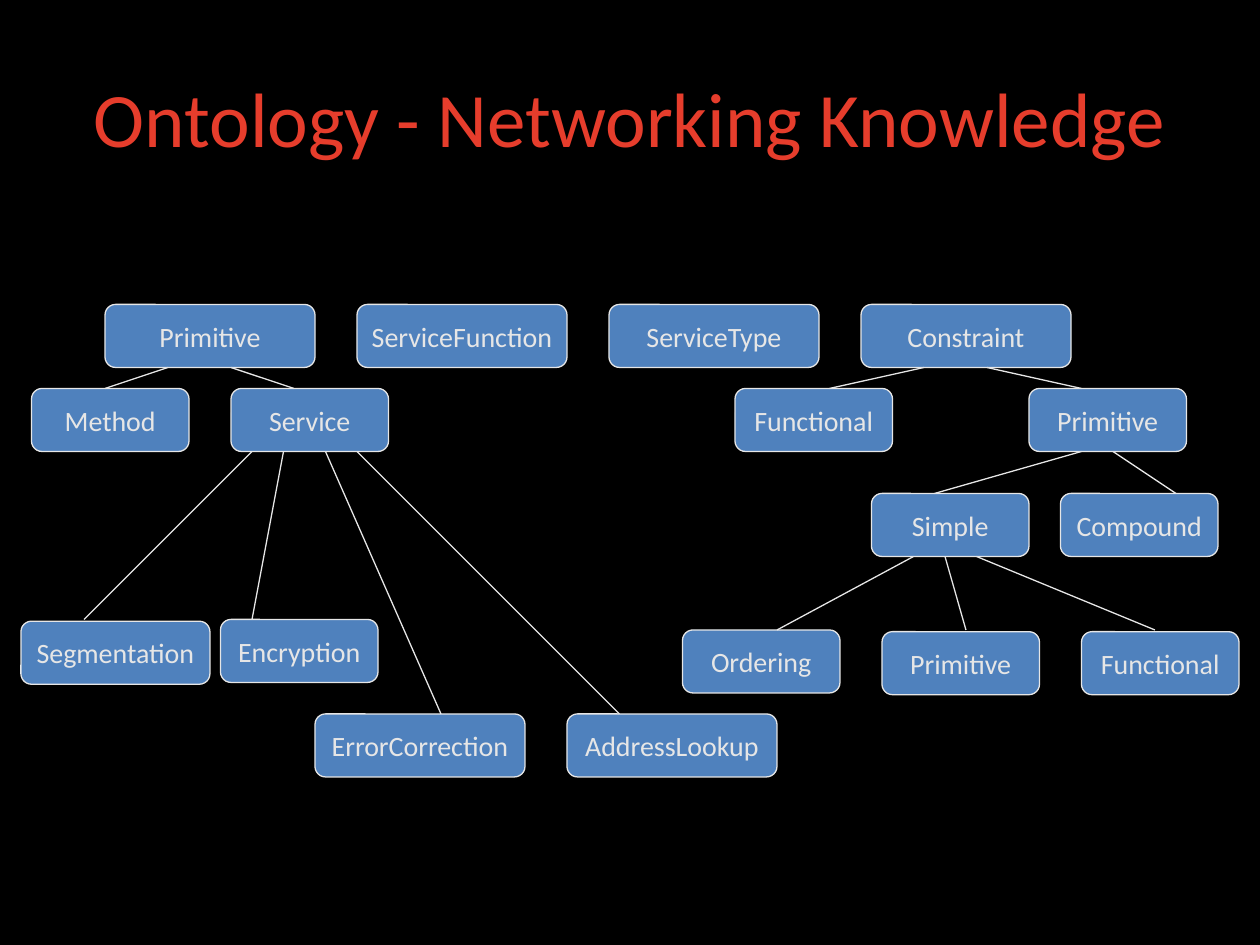
from pptx import Presentation
from pptx.dml.color import RGBColor
from pptx.enum.shapes import MSO_CONNECTOR, MSO_SHAPE
from pptx.enum.text import MSO_ANCHOR, PP_ALIGN
from pptx.oxml.ns import qn
from pptx.util import Pt
from lxml.etree import SubElement

BLACK = RGBColor(0x00, 0x00, 0x00)
RED = RGBColor(0xE6, 0x3D, 0x2C)
BLUE = RGBColor(0x4F, 0x81, 0xBD)
PALE = RGBColor(0xE6, 0xE6, 0xE6)
FONT = "Calibri"
HIGH = 36
WIDE = 120
SLIM = 90

ROOTS = ["Primitive", "ServiceFunction", "ServiceType", "Constraint"]

SERVICE_NODES = [
    ("Method", 6, 48, SLIM),
    ("Service", 120, 48, SLIM),
    ("Encryption", 114, 180, SLIM),
    ("ErrorCorrection", 168, 234, WIDE),
    ("AddressLookup", 312, 234, WIDE),
    ("Segmentation", 0, 181, 108),
]
SERVICE_LINKS = [
    (84, 36, 48, 48),
    (120, 36, 156, 48),
    (132, 84, 36, 180),
    (150, 84, 132, 180),
    (174, 84, 240, 234),
    (192, 84, 342, 234),
]

RULE_NODES = [
    ("Functional", 30, 48, SLIM),
    ("Primitive", 198, 48, SLIM),
    ("Compound", 216, 108, SLIM),
    ("Simple", 108, 108, SLIM),
    ("Ordering", 0, 186, SLIM),
    ("Primitive", 114, 187, SLIM),
    ("Functional", 228, 187, SLIM),
]
RULE_LINKS = [
    (138, 36, 84, 48),
    (174, 36, 228, 48),
    (228, 84, 144, 108),
    (246, 84, 282, 108),
    (132, 144, 54, 186),
    (150, 144, 162, 186),
    (168, 144, 270, 186),
]


def style(frame, size, color):
    """Centre the text of a frame and set its font."""
    frame.vertical_anchor = MSO_ANCHOR.MIDDLE
    line = frame.paragraphs[0]
    line.alignment = PP_ALIGN.CENTER
    font = line.runs[0].font
    font.name = FONT
    font.size = Pt(size)
    font.color.rgb = color


def add_title(slide, left, top, width, height):
    """Place and format the title."""
    title = slide.shapes.title
    title.left, title.top = Pt(left), Pt(top)
    title.width, title.height = Pt(width), Pt(height)
    title.text_frame.text = "Ontology - Networking Knowledge"
    style(title.text_frame, 44, RED)


def add_node(slide, text, left, top, width):
    """Draw one rounded box with its label."""
    node = slide.shapes.add_shape(
        MSO_SHAPE.ROUNDED_RECTANGLE, Pt(left), Pt(top), Pt(width), Pt(HIGH))
    node.shadow.inherit = False
    node.fill.solid()
    node.fill.fore_color.rgb = BLUE
    node.line.color.rgb = PALE
    node.line.width = Pt(0.75)
    node.text_frame.text = text
    node.text_frame.word_wrap = False
    style(node.text_frame, 16, PALE)


def add_link(slide, *ends):
    """Draw a thin line between two points."""
    link = slide.shapes.add_connector(
        MSO_CONNECTOR.STRAIGHT, *[Pt(end) for end in ends])
    link.line.color.rgb = PALE
    link.line.width = Pt(0.75)
    SubElement(link._element.spPr, qn("a:effectLst"))


def add_roots(slide, left, top, gap):
    """Draw the top row of boxes at equal gaps."""
    for i, text in enumerate(ROOTS):
        add_node(slide, text, left + i * (WIDE + gap), top, WIDE)


def add_tree(slide, left, top, nodes, links):
    """Draw the boxes and lines of one tree below its root."""
    for text, x, y, width in nodes:
        add_node(slide, text, left + x, top + y, width)
    for x1, y1, x2, y2 in links:
        add_link(slide, left + x1, top + y1, left + x2, top + y2)


def main():
    """Build the slide and save it."""
    deck = Presentation()
    deck.slide_width, deck.slide_height = Pt(720), Pt(540)
    slide = deck.slides.add_slide(deck.slide_layouts[5])
    slide.background.fill.solid()
    slide.background.fill.fore_color.rgb = BLACK
    add_title(slide, 36, 21.6, 648, 90)
    add_roots(slide, 60, 174, 24)
    add_tree(slide, 12, 174, SERVICE_NODES, SERVICE_LINKS)
    add_tree(slide, 390, 174, RULE_NODES, RULE_LINKS)
    deck.save("out.pptx")


if __name__ == "__main__":
    main()
